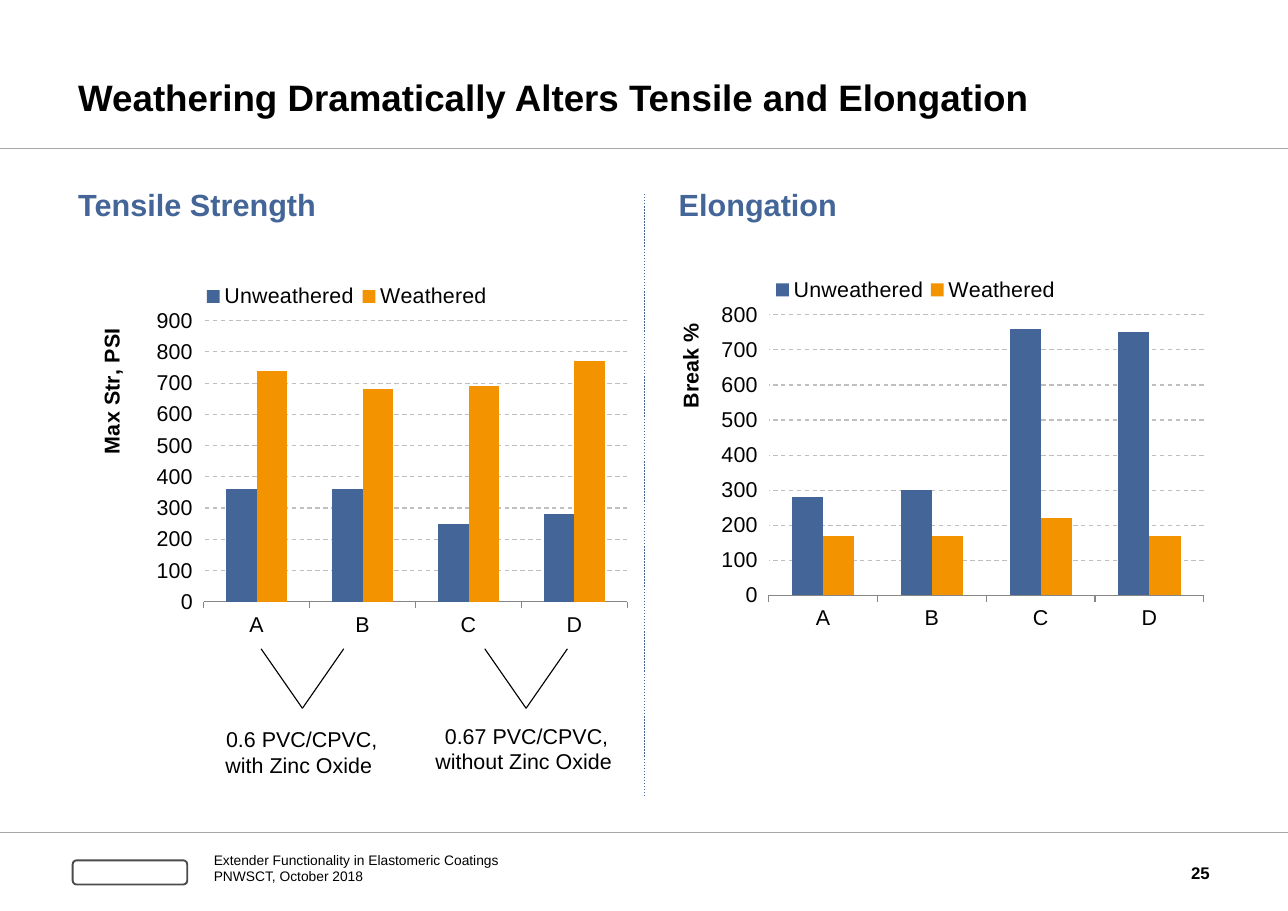
import pptx
import pptx.chart.data
import pptx.dml.color
import pptx.enum.chart
import pptx.enum.dml
import pptx.enum.shapes
import pptx.enum.text
import pptx.oxml.ns
import pptx.oxml.xmlchemy
import pptx.util

COLUMNS, ROWS = 116.9, 82.7
CELL = pptx.util.Inches(0.1)
FONT = "Arial"
COLORS = {
    "black": "000000", "white": "FFFFFF", "blue": "436597", "orange": "F49300",
    "rule": "A6A6A6", "grid": "BFBFBF", "axis": "868686", "badge": "4B4B4D",
}
ALIGN = pptx.enum.text.PP_ALIGN
ANCHOR = pptx.enum.text.MSO_ANCHOR
DASH = pptx.enum.dml.MSO_LINE
qn = pptx.oxml.ns.qn
new_element = pptx.oxml.xmlchemy.OxmlElement


def cells(*counts):
    """Turn columns or rows of the grid into lengths."""
    return [round(count * CELL) for count in counts]


def color(name):
    return pptx.dml.color.RGBColor.from_string(COLORS[name])


def set_font(font, size, name="black", bold=False):
    font.name = FONT
    font.size = pptx.util.Pt(size)
    font.bold = bold
    font.color.rgb = color(name)


def set_line(line, name, width, dash=None):
    line.color.rgb = color(name)
    line.width = pptx.util.Pt(width)
    if dash:
        line.dash_style = dash


def add_line(slide, start, end, name, width, dash=None):
    connector = slide.shapes.add_connector(
        pptx.enum.shapes.MSO_CONNECTOR.STRAIGHT, *cells(*start, *end))
    set_line(connector.line, name, width, dash)
    properties = connector.element.find(qn("p:spPr"))
    properties.append(new_element("a:effectLst"))


def add_text(slide, place, lines, size, name="black", bold=False,
             align=ALIGN.LEFT, anchor=ANCHOR.TOP, spacing=None):
    frame = slide.shapes.add_textbox(*cells(*place)).text_frame
    frame.word_wrap = True
    frame.vertical_anchor = anchor
    frame.margin_left = frame.margin_right = 0
    frame.margin_top = frame.margin_bottom = 0
    for index, line in enumerate(lines):
        paragraph = frame.add_paragraph() if index else frame.paragraphs[0]
        paragraph.alignment = align
        if spacing:
            paragraph.line_spacing = pptx.util.Pt(spacing)
        run = paragraph.add_run()
        run.text = line
        set_font(run.font, size, name, bold)


def set_layout(element, index, inner=False, **shares):
    """Fix a chart part at shares x, y, w, h of the chart, as child number index."""
    for old in element.findall(qn("c:layout")):
        element.remove(old)
    layout = new_element("c:layout")
    manual = new_element("c:manualLayout")
    layout.append(manual)
    settings = [("layoutTarget", "inner")] if inner else []
    settings += [("xMode", "edge"), ("yMode", "edge"), *shares.items()]
    for tag, value in settings:
        child = new_element(f"c:{tag}")
        child.set("val", str(value))
        manual.append(child)
    element.insert(index, layout)


def add_axis_title(axis, text, place):
    frame = axis.axis_title.text_frame
    run = frame.paragraphs[0].add_run()
    run.text = text
    set_font(run.font, 14, bold=True)
    title = axis.axis_title.element
    body = title.find(".//" + qn("a:bodyPr"))
    body.set("rot", "-5400000")
    body.set("vert", "horz")
    set_layout(title, 1, **place)


def add_column_chart(slide, place, title, maximum, unweathered, weathered,
                     plot_place, legend_place, title_place):
    data = pptx.chart.data.CategoryChartData(number_format="0")
    data.categories = list("ABCD")
    data.add_series("Unweathered", unweathered)
    data.add_series("Weathered", weathered)
    chart = slide.shapes.add_chart(
        pptx.enum.chart.XL_CHART_TYPE.COLUMN_CLUSTERED, *cells(*place), data).chart
    set_font(chart.font, 14)
    chart.has_title = False

    plot = chart.plots[0]
    plot.gap_width = 150
    plot.overlap = 0
    plot.vary_by_categories = False
    for series, name in zip(plot.series, ("blue", "orange")):
        series.format.fill.solid()
        series.format.fill.fore_color.rgb = color(name)
    chart_space = chart.element
    set_layout(chart_space.find(".//" + qn("c:plotArea")), 0, True, **plot_place)

    chart.has_legend = True
    chart.legend.position = pptx.enum.chart.XL_LEGEND_POSITION.RIGHT
    chart.legend.include_in_layout = False
    set_font(chart.legend.font, 14)
    set_layout(chart_space.find(".//" + qn("c:legend")), 1, **legend_place)

    set_line(chart.category_axis.format.line, "axis", 0.75)
    axis = chart.value_axis
    axis.minimum_scale, axis.maximum_scale, axis.major_unit = 0, maximum, 100
    axis.tick_labels.number_format = "0"
    axis.tick_labels.number_format_is_linked = False
    axis.format.line.fill.background()
    axis.has_major_gridlines = True
    set_line(axis.major_gridlines.format.line, "grid", 0.75, DASH.DASH)
    add_axis_title(axis, title, title_place)


def add_bracket(slide, left, label, label_place):
    """Join two categories in a V above their shared label."""
    top, tip, half = 58.9, 64.3, 3.75
    for side in (left, left + 2 * half):
        add_line(slide, (side, top), (left + half, tip), "black", 0.75)
    add_text(slide, label_place, [label], 14, align=ALIGN.CENTER)


def add_badge(slide, place):
    badge = slide.shapes.add_shape(
        pptx.enum.shapes.MSO_SHAPE.ROUNDED_RECTANGLE, *cells(*place))
    badge.shadow.inherit = False
    badge.fill.solid()
    badge.fill.fore_color.rgb = color("white")
    set_line(badge.line, "badge", 1.25)


def add_frame(slide):
    """Draw the rules and the footer."""
    for row, width in ((13.5, 0.75), (75.6, 0.5)):
        add_line(slide, (0, row), (COLUMNS, row), "rule", width)
    add_badge(slide, (6.6, 78.1, 10.4, 2.2))
    add_text(slide, (19.4, 77.3, 49.1, 3.1),
             ["Extender Functionality in Elastomeric Coatings", "PNWSCT, October 2018"],
             9, anchor=ANCHOR.MIDDLE, spacing=10.4)
    add_text(slide, (100.9, 76.9, 8.9, 4.7), ["25"], 11, bold=True,
             align=ALIGN.RIGHT, anchor=ANCHOR.MIDDLE)


def main():
    presentation = pptx.Presentation()
    presentation.slide_width, presentation.slide_height = cells(COLUMNS, ROWS)
    slide = presentation.slides.add_slide(presentation.slide_layouts[6])

    add_frame(slide)
    add_line(slide, (58.5, 17.6), (58.5, 72.4), "blue", 1, DASH.ROUND_DOT)
    add_text(slide, (7.1, 2.1, 102.7, 8.7),
             ["Weathering Dramatically Alters Tensile and Elongation"], 24,
             bold=True, anchor=ANCHOR.BOTTOM)
    for column, heading in ((7.1, "Tensile Strength"), (61.6, "Elongation")):
        add_text(slide, (column, 16.9, 48.2, 4.9), [heading], 20, "blue", True)

    add_column_chart(
        slide, (7, 24.4, 50, 33.6), "Max Str, PSI", 900,
        (360, 360, 250, 280), (740, 680, 690, 770),
        dict(x=0.23, y=0.14, w=0.77, h=0.76),
        dict(x=0.22, y=0.04, w=0.54, h=0.07), dict(x=0.03, y=0.15))
    add_column_chart(
        slide, (59, 23, 51.3, 34.9), "Break %", 800,
        (280, 300, 760, 750), (170, 170, 220, 170),
        dict(x=0.21, y=0.16, w=0.77, h=0.73),
        dict(x=0.21, y=0.06, w=0.52, h=0.07), dict(x=0.04, y=0.17))

    add_bracket(slide, 23.7, "0.6 PVC/CPVC, with Zinc Oxide ", (19.2, 65.9, 16.4, 3.8))
    add_bracket(slide, 44, "0.67 PVC/CPVC, without Zinc Oxide ", (37.9, 65.6, 19.8, 6.2))
    presentation.save("out.pptx")


if __name__ == "__main__":
    main()
